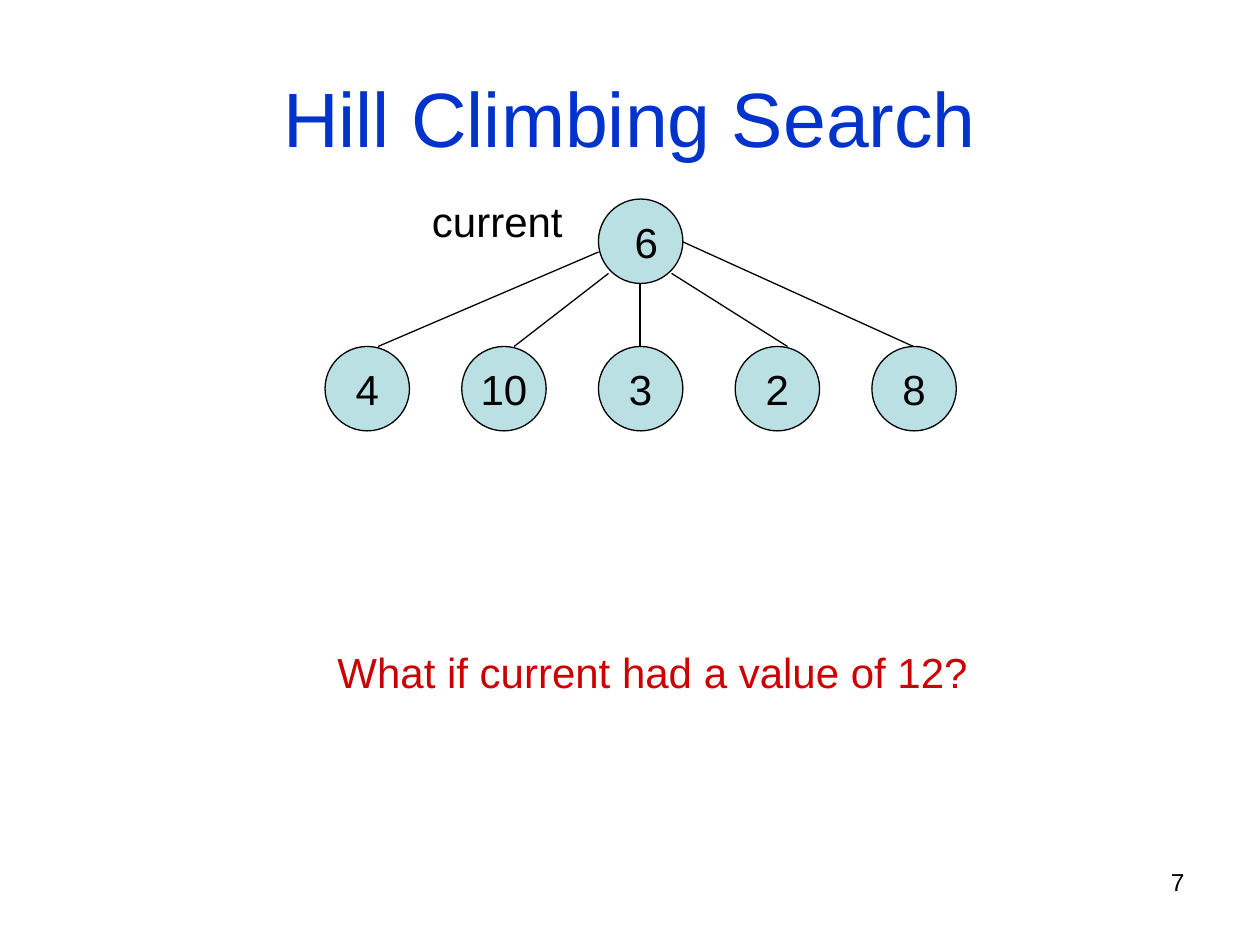
from lxml import etree
from pptx import Presentation
from pptx.dml.color import RGBColor
from pptx.enum import shapes, text
from pptx.oxml import ns
from pptx.util import Inches, Pt

COLORS = {"title": "0033CC", "node": "BBE0E3", "ink": "000000", "question": "CC0000"}
NODE_SIZE = 0.67
ROOT_LEFT, ROOT_TOP = 4.75, 1.58
CHILD_LEFT, CHILD_TOP, CHILD_STEP = 2.58, 2.75, 1.085


def write(frame, words, size, color, align, wrap=False):
    frame.word_wrap = wrap
    paragraph = frame.paragraphs[0]
    paragraph.text = words
    paragraph.alignment = align
    paragraph.font.name = "Arial"
    paragraph.font.size = Pt(size)
    paragraph.font.color.rgb = RGBColor.from_string(COLORS[color])


prs = Presentation()
prs.slide_width, prs.slide_height = Inches(10), Inches(7.5)
slide = prs.slides.add_slide(prs.slide_layouts[5])

# Title
title = slide.shapes.title
title.left, title.top = Inches(0.5), Inches(0.3)
title.width, title.height = Inches(9), Inches(1.25)
title.text_frame.vertical_anchor = text.MSO_ANCHOR.MIDDLE
write(title.text_frame, "Hill Climbing Search", 44, "title", text.PP_ALIGN.CENTER, wrap=True)

# Current state above its successors
nodes = [(" 6", ROOT_LEFT, ROOT_TOP)]
for i, value in enumerate(["4", "10", "3", "2", "8"]):
    nodes.append((value, CHILD_LEFT + i * CHILD_STEP, CHILD_TOP))

for value, left, top in nodes:
    node = slide.shapes.add_shape(
        shapes.MSO_SHAPE.OVAL, Inches(left), Inches(top), Inches(NODE_SIZE), Inches(NODE_SIZE))
    node.shadow.inherit = False
    node.fill.solid()
    node.fill.fore_color.rgb = RGBColor.from_string(COLORS["node"])
    node.line.color.rgb = RGBColor.from_string(COLORS["ink"])
    node.line.width = Pt(0.75)
    node.text_frame.vertical_anchor = text.MSO_ANCHOR.MIDDLE
    write(node.text_frame, value, 24, "ink", text.PP_ALIGN.CENTER)

# Branches: start x and y on the current state, end x on the successor
branches = [(5.08, 2.25, 5.08), (4.83, 2.17, 4.08), (5.33, 2.17, 6.25),
            (4.75, 2, 3), (5.42, 1.92, 7.25)]
for start_x, start_y, end_x in branches:
    branch = slide.shapes.add_connector(
        shapes.MSO_CONNECTOR.STRAIGHT,
        Inches(start_x), Inches(start_y), Inches(end_x), Inches(CHILD_TOP))
    branch.line.color.rgb = RGBColor.from_string(COLORS["ink"])
    branch.line.width = Pt(0.75)
    etree.SubElement(branch._element.spPr, ns.qn("a:effectLst"))

# Labels and page number
labels = [
    ("current", 3.33, 1.5, 1.24, 0.5, 24, "ink", text.PP_ALIGN.LEFT),
    ("What if current had a value of 12?", 2.58, 5.08, 5.25, 0.51, 24, "question",
     text.PP_ALIGN.LEFT),
    ("7", 7.17, 6.83, 2.33, 0.52, 14, "ink", text.PP_ALIGN.RIGHT),
]
for words, left, top, width, height, size, color, align in labels:
    label = slide.shapes.add_textbox(Inches(left), Inches(top), Inches(width), Inches(height))
    write(label.text_frame, words, size, color, align, wrap=align == text.PP_ALIGN.RIGHT)

prs.save("out.pptx")
